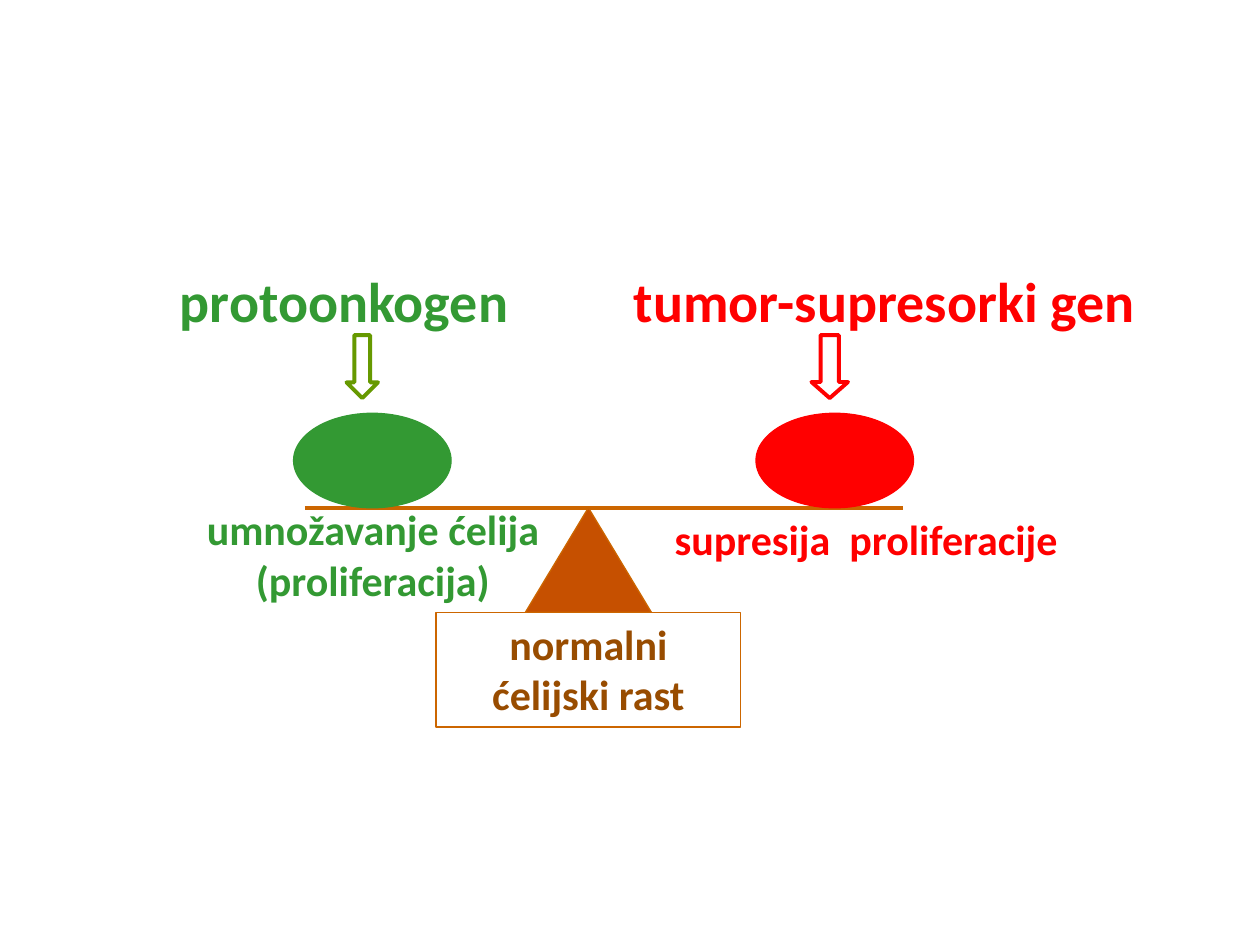
from pptx import Presentation
from pptx.dml.color import RGBColor
from pptx.enum.shapes import MSO_CONNECTOR, MSO_SHAPE
from pptx.enum.text import MSO_ANCHOR, PP_ALIGN
from pptx.oxml.ns import qn
from pptx.util import Inches, Pt
from lxml.etree import SubElement

COLORS = {
    "green": "339933",
    "olive": "669900",
    "red": "FF0000",
    "orange": "CC6600",
    "rust": "C65000",
    "brown": "984C00",
}


def rgb(name):
    return RGBColor.from_string(COLORS[name])


def write(tf, text, color, size=24, align=PP_ALIGN.CENTER):
    tf.word_wrap = True
    tf.vertical_anchor = MSO_ANCHOR.TOP
    for i, line in enumerate(text.split("\n")):
        p = tf.paragraphs[0] if i == 0 else tf.add_paragraph()
        p.alignment = align
        r = p.add_run()
        r.text = line
        r.font.name = "Calibri"
        r.font.size = Pt(size)
        r.font.bold = True
        r.font.color.rgb = rgb(color)


class Slide:
    def __init__(self, prs):
        self.s = prs.slides.add_slide(prs.slide_layouts[6])

    def text(self, x, y, w, h, text, color, **fmt):
        sp = self.s.shapes.add_textbox(Inches(x), Inches(y), Inches(w), Inches(h))
        write(sp.text_frame, text, color, **fmt)

    def shape(self, kind, x, y, w, h, line, fill=None, width=0.75):
        sp = self.s.shapes.add_shape(kind, Inches(x), Inches(y), Inches(w), Inches(h))
        sp.shadow.inherit = False
        if fill:
            sp.fill.solid()
            sp.fill.fore_color.rgb = rgb(fill)
        else:
            sp.fill.background()
        sp.line.color.rgb = rgb(line)
        sp.line.width = Pt(width)
        return sp

    def line(self, x1, y1, x2, y2, color, width):
        c = self.s.shapes.add_connector(
            MSO_CONNECTOR.STRAIGHT, Inches(x1), Inches(y1), Inches(x2), Inches(y2)
        )
        c.line.color.rgb = rgb(color)
        c.line.width = Pt(width)
        SubElement(c._element.spPr, qn("a:effectLst"))


def main():
    prs = Presentation()
    prs.slide_width, prs.slide_height = Inches(10), Inches(7.5)
    slide = Slide(prs)

    slide.text(1.44, 3.95, 3.04, 0.91, "umnožavanje ćelija\n(proliferacija)", "green")
    slide.text(5.25, 4.03, 3.25, 0.5, "supresija  proliferacije", "red")

    slide.line(2.42, 4.03, 7.17, 4.03, "orange", 2.25)
    for x, color in ((2.33, "green"), (6, "red")):
        slide.shape(MSO_SHAPE.OVAL, x, 3.28, 1.25, 0.75, color, fill=color)
    slide.shape(MSO_SHAPE.ISOSCELES_TRIANGLE, 4.17, 4.03, 1, 0.83, "orange", fill="rust")
    base = slide.shape(MSO_SHAPE.RECTANGLE, 3.46, 4.86, 2.42, 0.91, "orange")
    write(base.text_frame, "normalni ćelijski rast", "brown")

    for x, w, color, head in ((2.75, 0.25, "olive", 0.5), (6.44, 0.29, "red", 0.44)):
        arrow = slide.shape(MSO_SHAPE.DOWN_ARROW, x, 2.66, w, 0.5, color, width=2.25)
        arrow.adjustments[1] = head
    slide.text(1.33, 2.07, 3.17, 0.63, "protoonkogen", "green", size=32, align=PP_ALIGN.LEFT)
    slide.text(4.73, 2.07, 4.58, 0.63, "tumor-supresorki gen", "red", size=32)

    prs.save("out.pptx")


if __name__ == "__main__":
    main()
